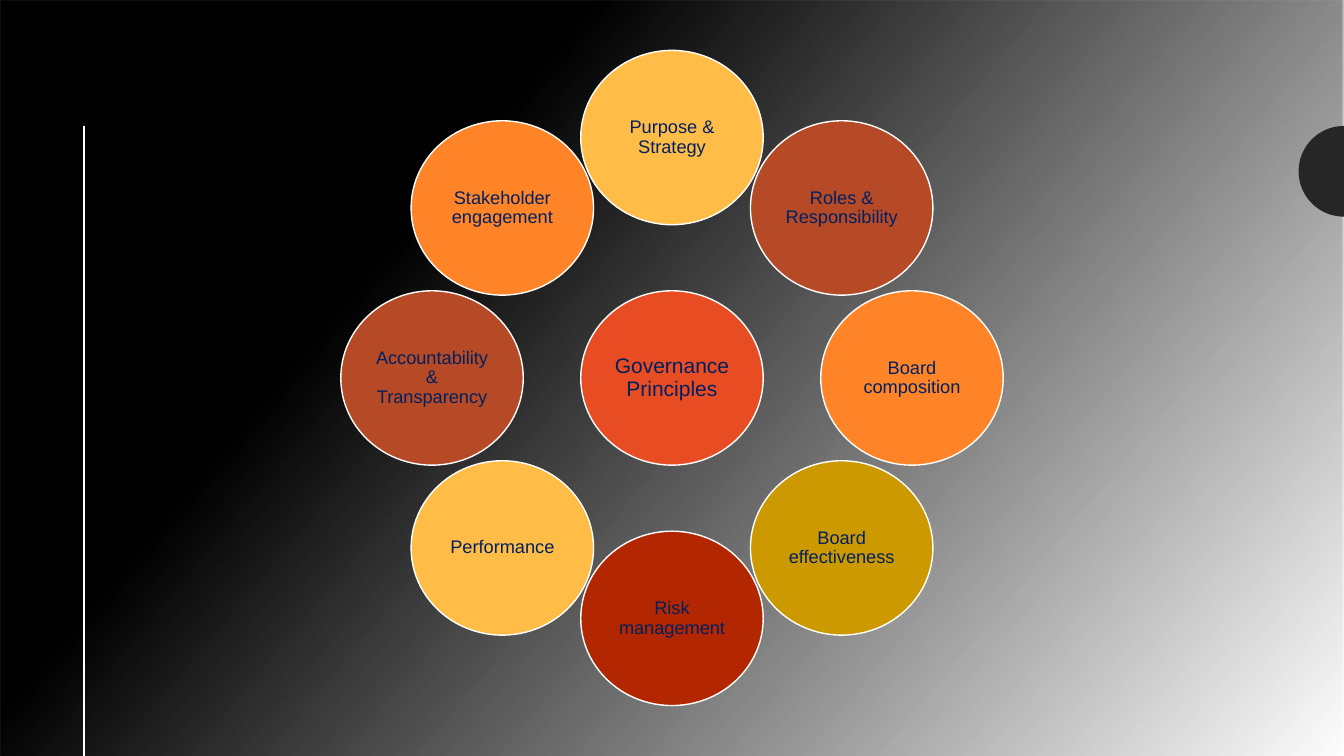
from math import cos, pi, sin

from lxml.etree import SubElement
from pptx import Presentation
from pptx.dml.color import RGBColor
from pptx.enum.shapes import MSO_CONNECTOR, MSO_SHAPE
from pptx.enum.text import MSO_ANCHOR, PP_ALIGN
from pptx.oxml.ns import qn
from pptx.util import Inches, Pt

SLIDE_WIDTH, SLIDE_HEIGHT = 13.33, 7.5
COLORS = {
    "black": "000000",
    "white": "FFFFFF",
    "charcoal": "262626",
    "navy": "002060",
    "red": "E84C22",
    "yellow": "FFBD47",
    "rust": "B64926",
    "orange": "FF8427",
    "gold": "CC9900",
    "crimson": "B22600",
}
PRINCIPLES = [
    ("Purpose & Strategy", "yellow"),
    ("Roles & Responsibility", "rust"),
    ("Board composition", "orange"),
    ("Board effectiveness", "gold"),
    ("Risk management", "crimson"),
    ("Performance", "yellow"),
    ("Accountability & Transparency", "rust"),
    ("Stakeholder engagement", "orange"),
]


def color(name):
    return RGBColor.from_string(COLORS[name])


def add_backdrop(slide, left, top, width, height):
    """Black gradient that fades to clear towards the bottom right."""
    backdrop = slide.shapes.add_shape(
        MSO_SHAPE.RECTANGLE, Inches(left), Inches(top), Inches(width), Inches(height))
    backdrop.shadow.inherit = False
    backdrop.line.fill.background()
    backdrop.fill.gradient()
    backdrop.fill.gradient_angle = 320
    for stop, position in zip(backdrop.fill.gradient_stops, (0.3, 1)):
        stop.position = position
        stop.color.rgb = color("black")
    last_color = backdrop._element.spPr.findall(".//" + qn("a:srgbClr"))[-1]
    SubElement(last_color, qn("a:alpha"), val="0")


def add_side_line(slide, left, top, height):
    line = slide.shapes.add_connector(
        MSO_CONNECTOR.STRAIGHT, Inches(left), Inches(top), Inches(left), Inches(top + height))
    line.line.color.rgb = color("white")
    line.line.width = Pt(1.5)
    SubElement(line._element.spPr, qn("a:effectLst"))


def add_half_disc(slide, right, top, radius, steps=50):
    """Left half of a disc whose flat side lies at the given right edge."""
    angles = [pi * step / steps for step in range(steps + 1)]
    points = [(Inches(right - radius * sin(angle)),
               Inches(top + radius - radius * cos(angle))) for angle in angles]
    builder = slide.shapes.build_freeform(*points[0])
    builder.add_line_segments(points[1:], close=True)
    disc = builder.convert_to_shape()
    disc.shadow.inherit = False
    disc.fill.solid()
    disc.fill.fore_color.rgb = color("charcoal")
    disc.line.fill.background()


def add_bubble(slide, center_x, center_y, width, height, label, fill, size):
    bubble = slide.shapes.add_shape(
        MSO_SHAPE.OVAL, Inches(center_x - width / 2), Inches(center_y - height / 2),
        Inches(width), Inches(height))
    bubble.shadow.inherit = False
    bubble.fill.solid()
    bubble.fill.fore_color.rgb = color(fill)
    bubble.line.color.rgb = color("white")
    bubble.line.width = Pt(1)

    frame = bubble.text_frame
    frame.text = label
    frame.word_wrap = True
    frame.vertical_anchor = MSO_ANCHOR.MIDDLE
    frame.margin_left = frame.margin_right = Inches(0.02)
    frame.margin_top = frame.margin_bottom = Inches(0.02)
    paragraph = frame.paragraphs[0]
    paragraph.alignment = PP_ALIGN.CENTER
    paragraph.line_spacing = 0.9
    font = paragraph.runs[0].font
    font.name = "Arial"
    font.size = Pt(size)
    font.color.rgb = color("navy")


def add_principles_ring(slide, left, top, width, height):
    """Central bubble with the principles set clockwise around it from the top."""
    bubble_width, bubble_height = 1.81, 1.73
    center_x, center_y = left + width / 2, top + height / 2
    radius_x, radius_y = (width - bubble_width) / 2, (height - bubble_height) / 2
    add_bubble(slide, center_x, center_y, bubble_width, bubble_height,
               "Governance Principles", "red", 15)
    for index, (label, fill) in enumerate(PRINCIPLES):
        angle = 2 * pi * index / len(PRINCIPLES)
        add_bubble(slide, center_x + radius_x * sin(angle), center_y - radius_y * cos(angle),
                   bubble_width, bubble_height, label, fill, 13)


def main():
    presentation = Presentation()
    presentation.slide_width = Inches(SLIDE_WIDTH)
    presentation.slide_height = Inches(SLIDE_HEIGHT)
    slide = presentation.slides.add_slide(presentation.slide_layouts[6])
    add_backdrop(slide, 0, 0, SLIDE_WIDTH, SLIDE_HEIGHT)
    add_side_line(slide, 0.83, 1.25, 6.25)
    add_half_disc(slide, SLIDE_WIDTH, 1.25, 0.45)
    add_principles_ring(slide, 3.38, 0.5, 6.57, 6.5)
    presentation.save("out.pptx")


if __name__ == "__main__":
    main()
